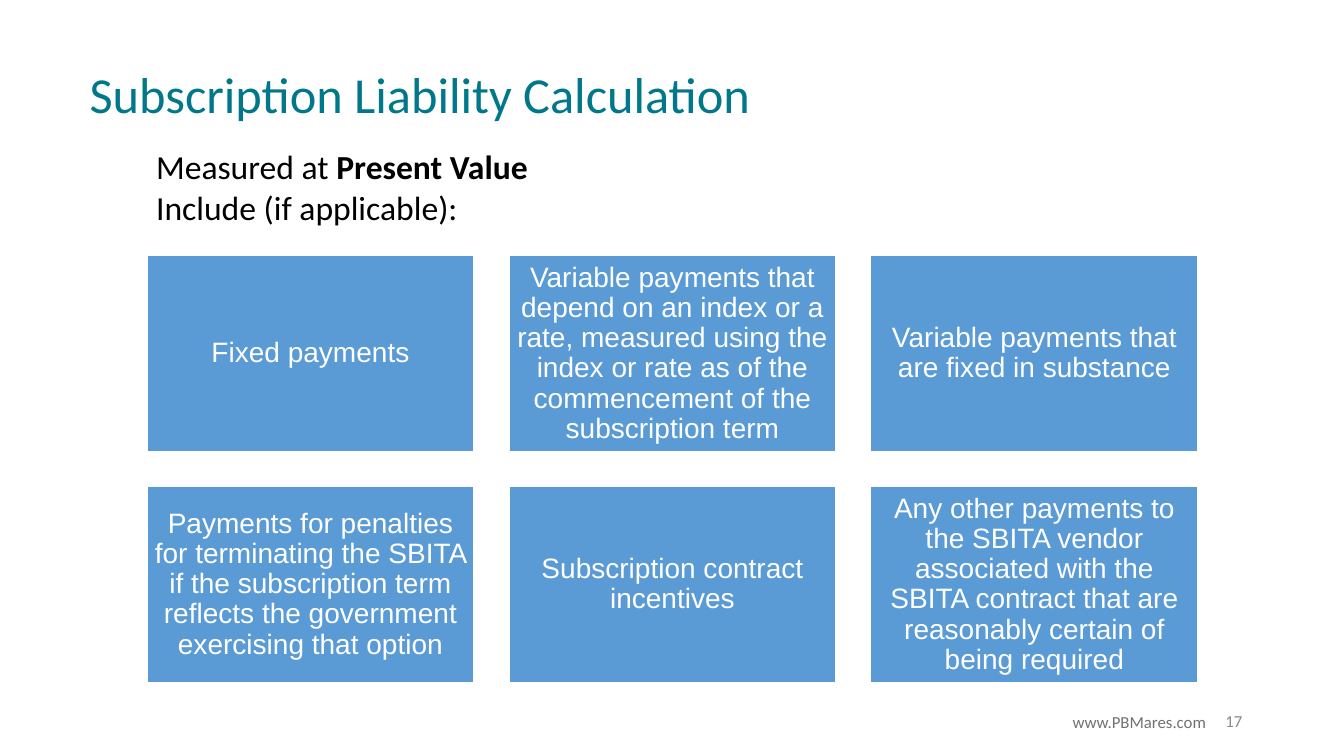
from dataclasses import dataclass

from pptx import Presentation
from pptx.dml.color import RGBColor
from pptx.enum.shapes import MSO_SHAPE
from pptx.enum.text import MSO_ANCHOR, PP_ALIGN
from pptx.util import Pt

EMU_PER_PX = 9144  # 100 px to the inch

COLORS = {
    "title": "00788A",
    "body": "000000",
    "card": "5B9BD5",
    "white": "FFFFFF",
    "address": "757070",
    "number": "888888",
}


@dataclass(frozen=True)
class Run:
    text: str
    bold: bool = False


@dataclass(frozen=True)
class Label:
    left: int
    top: int
    width: int
    height: int
    lines: list[list[Run]]
    size: int
    color: str
    align: PP_ALIGN = PP_ALIGN.LEFT
    anchor: MSO_ANCHOR = MSO_ANCHOR.TOP


LABELS = [
    Label(942, 695, 300, 40, [[Run("17")]], 12, "number",
          PP_ALIGN.RIGHT, MSO_ANCHOR.MIDDLE),
    Label(1054, 701, 237, 30, [[Run("www.PBMares.com")]], 12, "address"),
    Label(79, 58, 913, 71, [[Run("Subscription Liability Calculation")]], 36, "title"),
    Label(145, 140, 414, 91,
          [[Run("Measured at "), Run("Present Value", bold=True)],
           [Run("Include (if applicable):")]], 24, "body"),
]

PAYMENTS = [
    "Fixed payments",
    "Variable payments that depend on an index or a rate, measured using the "
    "index or rate as of the commencement of the subscription term",
    "Variable payments that are fixed in substance",
    "Payments for penalties for terminating the SBITA if the subscription term "
    "reflects the government exercising that option",
    "Subscription contract incentives",
    "Any other payments to the SBITA vendor associated with the SBITA contract "
    "that are reasonably certain of being required",
]

# Card grid
COLUMNS = 3
GRID_LEFT, GRID_TOP = 145, 253
CARD_WIDTH, CARD_HEIGHT = 326, 196
COLUMN_STEP, ROW_STEP = 359, 229
CARD_INSET = 7


def px(length: int) -> int:
    return length * EMU_PER_PX


def color(name: str) -> RGBColor:
    return RGBColor.from_string(COLORS[name])


def style_font(paragraph, name: str, size: int, color_name: str) -> None:
    paragraph.font.name = name
    paragraph.font.size = Pt(size)
    paragraph.font.color.rgb = color(color_name)


def add_label(slide, label: Label) -> None:
    box = slide.shapes.add_textbox(
        px(label.left), px(label.top), px(label.width), px(label.height))
    frame = box.text_frame
    frame.word_wrap = True
    frame.vertical_anchor = label.anchor
    for index, line in enumerate(label.lines):
        paragraph = frame.add_paragraph() if index else frame.paragraphs[0]
        paragraph.alignment = label.align
        style_font(paragraph, "Calibri", label.size, label.color)
        for part in line:
            run = paragraph.add_run()
            run.text = part.text
            if part.bold:
                run.font.bold = True


def add_card(slide, index: int, text: str) -> None:
    row, column = divmod(index, COLUMNS)
    card = slide.shapes.add_shape(
        MSO_SHAPE.RECTANGLE,
        px(GRID_LEFT + column * COLUMN_STEP), px(GRID_TOP + row * ROW_STEP),
        px(CARD_WIDTH), px(CARD_HEIGHT))
    card.shadow.inherit = False
    card.fill.solid()
    card.fill.fore_color.rgb = color("card")
    card.line.color.rgb = color("white")
    card.line.width = Pt(2)

    frame = card.text_frame
    frame.word_wrap = True
    frame.vertical_anchor = MSO_ANCHOR.MIDDLE
    frame.margin_left = frame.margin_right = px(CARD_INSET)
    frame.margin_top = frame.margin_bottom = px(CARD_INSET)
    paragraph = frame.paragraphs[0]
    paragraph.text = text
    paragraph.alignment = PP_ALIGN.CENTER
    paragraph.line_spacing = 0.9
    style_font(paragraph, "Arial", 20, "white")


def main() -> None:
    presentation = Presentation()
    presentation.slide_width = px(1333)
    presentation.slide_height = px(750)
    slide = presentation.slides.add_slide(presentation.slide_layouts[6])

    # Footer, title and introduction
    for label in LABELS:
        add_label(slide, label)

    # Payments to include
    for index, text in enumerate(PAYMENTS):
        add_card(slide, index, text)

    presentation.save("out.pptx")


if __name__ == "__main__":
    main()
